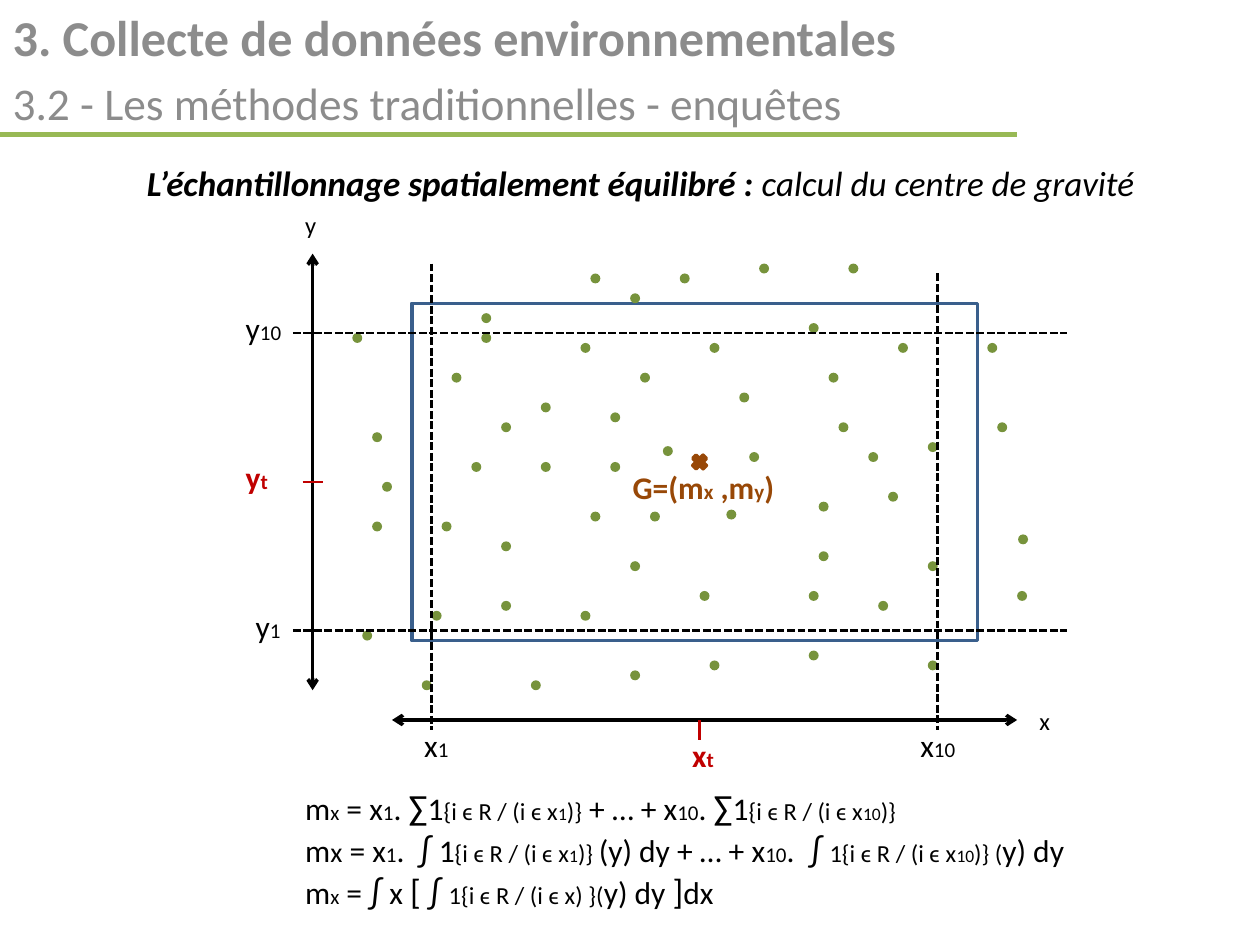
from dataclasses import dataclass

from lxml import etree
from pptx import Presentation
from pptx.dml.color import RGBColor
from pptx.enum.dml import MSO_LINE
from pptx.enum.shapes import MSO_CONNECTOR, MSO_SHAPE
from pptx.enum.text import MSO_ANCHOR, MSO_AUTO_SIZE, PP_ALIGN
from pptx.oxml.ns import qn
from pptx.util import Pt

STRAIGHT = MSO_CONNECTOR.STRAIGHT
OVAL = MSO_SHAPE.OVAL
RECTANGLE = MSO_SHAPE.RECTANGLE
MULTIPLY = MSO_SHAPE.MATH_MULTIPLY
DASH = MSO_LINE.SQUARE_DOT
LEFT = PP_ALIGN.LEFT
CENTER = PP_ALIGN.CENTER
TOP = MSO_ANCHOR.TOP
NO_FIT = MSO_AUTO_SIZE.NONE
GROW = MSO_AUTO_SIZE.SHAPE_TO_FIT_TEXT

BLACK = RGBColor(0x00, 0x00, 0x00)
GREY = RGBColor(0x8C, 0x8C, 0x8C)
LIGHT_GREEN = RGBColor(0x98, 0xB9, 0x55)
DOT_GREEN = RGBColor(0x77, 0x93, 0x3C)
BLUE = RGBColor(0x3A, 0x5F, 0x8C)
BROWN = RGBColor(0x98, 0x48, 0x07)
RED = RGBColor(0xC0, 0x00, 0x00)

FONT = "Calibri"
GRID = 5.67
ORIGIN_X, ORIGIN_Y = 133.3, 116.6


@dataclass
class Run:
    text: str
    size: float
    bold: bool = False
    italic: bool = False


@dataclass
class Line:
    start: tuple[float, float]
    end: tuple[float, float]
    color: RGBColor = BLACK
    width: float = 1.5
    dashed: bool = False
    arrows: bool = False


@dataclass
class Label:
    column: float
    row: float
    columns: float
    runs: list[Run]
    color: RGBColor = BLACK


def grid_x(column: float) -> float:
    return ORIGIN_X + GRID * column


def grid_y(row: float) -> float:
    return ORIGIN_Y + GRID * row


def grid_point(column: float, row: float) -> tuple[float, float]:
    return grid_x(column), grid_y(row)


def add_runs(paragraph, runs: list[Run], color: RGBColor) -> None:
    for item in runs:
        run = paragraph.add_run()
        run.text = item.text
        run.font.name = FONT
        run.font.size = Pt(item.size)
        run.font.bold = item.bold
        run.font.italic = item.italic
        run.font.color.rgb = color


def add_text(slide, left: float, top: float, width: float, height: float,
             paragraphs: list[list[Run]], color: RGBColor = BLACK):
    box = slide.shapes.add_textbox(Pt(left), Pt(top), Pt(width), Pt(height))
    frame = box.text_frame
    frame.word_wrap = True
    frame.auto_size = GROW
    for index, runs in enumerate(paragraphs):
        paragraph = frame.add_paragraph() if index else frame.paragraphs[0]
        add_runs(paragraph, runs, color)
    return frame


def add_line(slide, line: Line) -> None:
    connector = slide.shapes.add_connector(
        STRAIGHT, *(Pt(value) for value in line.start + line.end))
    connector.line.color.rgb = line.color
    connector.line.width = Pt(line.width)
    if line.dashed:
        connector.line.dash_style = DASH
    if line.arrows:
        outline = connector.line._get_or_add_ln()
        for tag in ("a:headEnd", "a:tailEnd"):
            etree.SubElement(outline, qn(tag), type="arrow")
    etree.SubElement(connector._element.spPr, qn("a:effectLst"))


def add_grid_shape(slide, kind, column: float, row: float, columns: float, rows: float,
                   fill: RGBColor | None, outline: RGBColor | None) -> None:
    shape = slide.shapes.add_shape(kind, Pt(grid_x(column)), Pt(grid_y(row)),
                                   Pt(GRID * columns), Pt(GRID * rows))
    shape.shadow.inherit = False
    if fill is None:
        shape.fill.background()
    else:
        shape.fill.solid()
        shape.fill.fore_color.rgb = fill
    if outline is None:
        shape.line.fill.background()
    else:
        shape.line.color.rgb = outline
        shape.line.width = Pt(2)


def add_heading(slide) -> None:
    title = slide.shapes.title
    title.left, title.top, title.width, title.height = Pt(0), Pt(0), Pt(705.6), Pt(79.2)
    frame = title.text_frame
    frame.auto_size = NO_FIT
    frame.vertical_anchor = TOP
    runs = [Run("3. Collecte de données environnementales", 28.7, True),
            Run("3.2 - Les méthodes traditionnelles - enquêtes", 25.9)]
    for index, run in enumerate(runs):
        paragraph = frame.add_paragraph() if index else frame.paragraphs[0]
        paragraph.alignment = LEFT
        paragraph.space_before = Pt(round(run.size * 0.2, 1))
        add_runs(paragraph, [run], GREY)


def indexed(letter: str, index: str, bold: bool = False) -> list[Run]:
    return [Run(letter, 18, bold), Run(index, 12, bold)]


def membership(index: str, opening: str = "{i ϵ R / (i ϵ x", closing: str = ")}") -> list[Run]:
    return [Run(opening, 14), Run(index, 10), Run(closing, 14)]


def sum_term(index: str) -> list[Run]:
    return [Run(index, 12), Run(". ", 18), Run("∑", 20), Run("1", 18), *membership(index)]


DOTS = [
    (25, 11), (41, 17), (27, 22), (22, 17), (24, 26), (42, 31), (49.7, 30.8), (40, 36),
    (47, 39), (59, 35), (27, 34), (64, 25), (70, 24), (43.3, 24.4), (51, 19), (31, 20),
    (58, 12), (31, 26), (36, 31), (52, 25), (59, 30), (66, 29), (60, 17), (35, 14),
    (27, 40), (58, 39), (25, 13), (48, 14), (67, 14), (38, 26), (77, 22), (38, 21),
    (20, 41), (70, 36), (21, 32), (45, 7), (53, 6), (12, 13), (62, 6), (76, 14),
    (79, 39), (40, 9), (36, 7), (15, 28), (14, 23), (19, 48), (40, 47), (65, 40),
    (58, 45), (79.1, 33.3), (70, 46), (14, 32), (30, 48), (13, 43), (35, 41), (61, 22),
    (48, 46),
]
LINES = [
    Line((0, 77), (581, 77), LIGHT_GREEN, 3),
    Line(grid_point(8, 5), grid_point(8, 49), width=2, arrows=True),
    Line(grid_point(16, 52), grid_point(79, 52), width=2, arrows=True),
    Line(grid_point(20, 6), grid_point(20, 53), dashed=True),
    Line(grid_point(71, 7), grid_point(71, 53), dashed=True),
    Line(grid_point(6, 13), grid_point(84, 13), dashed=True),
    Line(grid_point(6, 43), grid_point(84, 43), dashed=True),
    Line(grid_point(47, 52), grid_point(47, 54), RED),
    Line(grid_point(7, 28), grid_point(9, 28), RED),
]
LABELS = [
    Label(6, 0, 4, [Run("y", 14)]),
    Label(80, 50, 5, [Run("x", 14)]),
    Label(18, 52, 6, indexed("x", "1")),
    Label(68, 52, 7, indexed("x", "10")),
    Label(1, 40, 7, indexed("y", "1")),
    Label(0, 10, 7, indexed("y", "10")),
    Label(45, 53, 7, indexed("x", "t", True), RED),
    Label(0, 25, 7, indexed("y", "t", True), RED),
    Label(39, 26, 18, [*indexed("G=(m", "x", True), *indexed(" ,m", "y", True),
                       Run(")", 18, True)], BROWN),
]
FORMULAS = [
    [*indexed("m", "x"), Run(" = x", 18), *sum_term("1"), Run(" + … + x", 18),
     *sum_term("10")],
    [Run("m", 18), Run("x", 16), Run(" = x", 18), Run("1", 12), Run(".  ", 18),
     Run("∫", 20), Run(" 1", 18), *membership("1", closing=")} "),
     Run("(y) dy + … + x", 18), Run("10", 12), Run(". ", 18), Run(" ∫", 20), Run(" ", 18),
     *membership("10", "1{i ϵ R / (i ϵ x", ")} ("), Run("y) dy", 18)],
    [*indexed("m", "x"), Run(" = ", 18), Run("∫", 20), Run(" x ", 18), Run("[ ∫", 20),
     Run(" ", 18), Run("1{i ϵ R / (i ϵ x) }(", 14), Run("y) dy ", 18), Run("]", 20),
     Run("dx", 18)],
]


def main() -> None:
    presentation = Presentation()
    presentation.slide_width, presentation.slide_height = Pt(720), Pt(540)
    slide = presentation.slides.add_slide(presentation.slide_layouts[5])
    add_heading(slide)
    subject = add_text(slide, 65.5, 88.6, 601.2, 51.1, [[
        Run("L’échantillonnage spatialement équilibré : ", 20, True, True),
        Run("calcul du centre de gravité", 20, italic=True)]])
    subject.auto_size = NO_FIT
    subject.paragraphs[0].alignment = CENTER
    subject.paragraphs[0].space_before = Pt(4)
    add_grid_shape(slide, RECTANGLE, 18, 10, 57, 34, None, BLUE)
    for column, row in DOTS:
        add_grid_shape(slide, OVAL, column, row, 1, 1, DOT_GREEN, None)
    add_grid_shape(slide, MULTIPLY, 46, 25, 2, 2, BROWN, BROWN)
    for line in LINES:
        add_line(slide, line)
    for label in LABELS:
        height = 24.5 if label.runs[0].size == 14 else 29
        add_text(slide, *grid_point(label.column, label.row), GRID * label.columns, height,
                 [label.runs], label.color)
    add_text(slide, grid_x(6), grid_y(58), 487.4, 80, FORMULAS)
    presentation.save("out.pptx")


if __name__ == "__main__":
    main()
